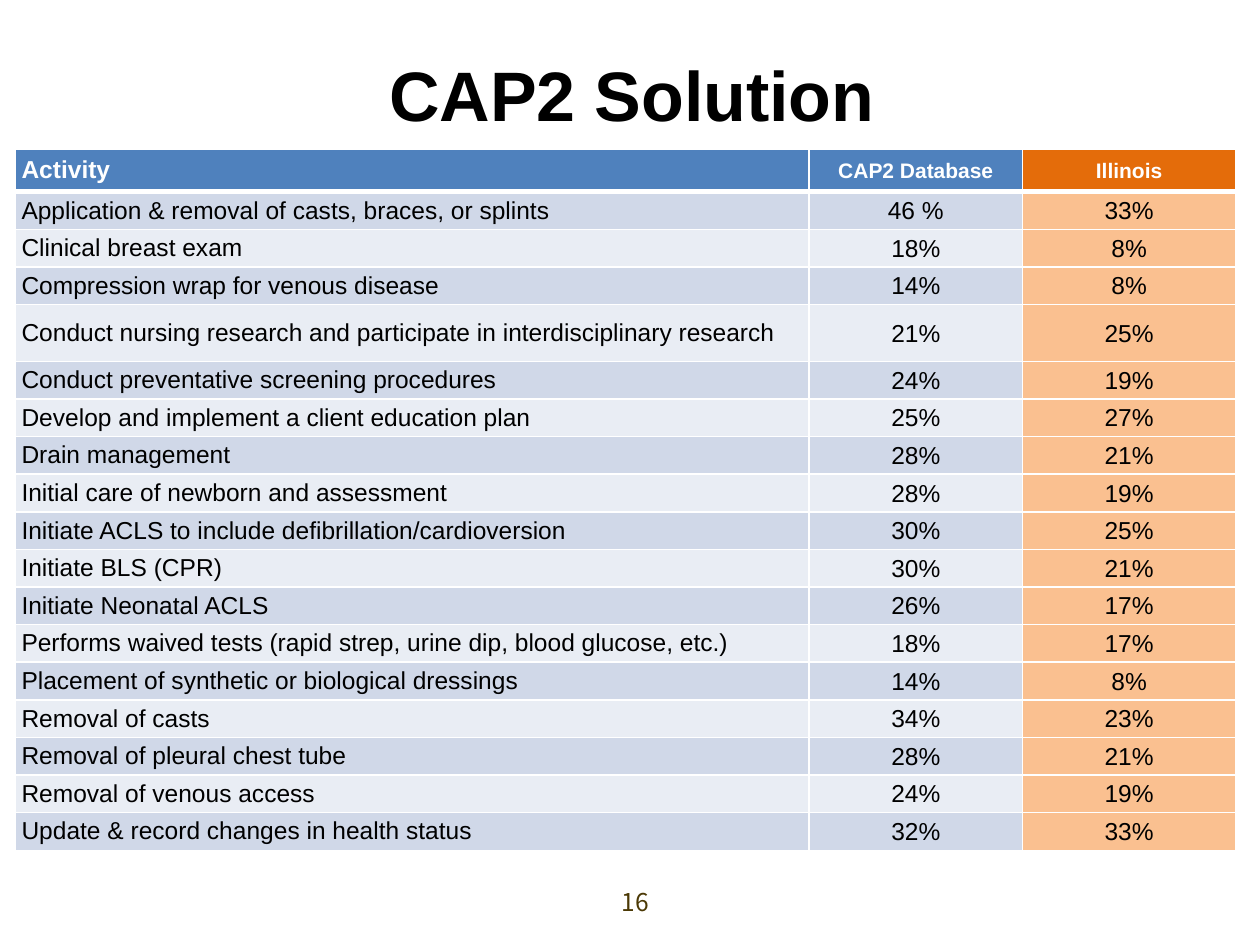
from lxml import etree
from pptx import Presentation
from pptx.dml.color import RGBColor
from pptx.enum.text import MSO_ANCHOR, PP_ALIGN
from pptx.oxml.ns import qn
from pptx.util import Pt

LEFT, CENTER = PP_ALIGN.LEFT, PP_ALIGN.CENTER
TOP, MIDDLE = MSO_ANCHOR.TOP, MSO_ANCHOR.MIDDLE

BLACK = RGBColor(0x00, 0x00, 0x00)
WHITE = RGBColor(0xFF, 0xFF, 0xFF)
BROWN = RGBColor(0x4B, 0x39, 0x05)
BLUE = RGBColor(0x4F, 0x81, 0xBD)
ORANGE = RGBColor(0xE4, 0x6C, 0x0A)
BAND_DARK = RGBColor(0xD0, 0xD8, 0xE8)
BAND_LIGHT = RGBColor(0xE9, 0xED, 0xF4)
PEACH = RGBColor(0xFA, 0xC0, 0x90)

HEADER = ("Activity", "CAP2 Database", "Illinois")
ACTIVITIES = [
    ("Application & removal of casts, braces, or splints", "46 %", "33%"),
    ("Clinical breast exam", "18%", "8%"),
    ("Compression wrap for venous disease", "14%", "8%"),
    ("Conduct nursing research and participate in interdisciplinary research", "21%", "25%"),
    ("Conduct preventative screening procedures", "24%", "19%"),
    ("Develop and implement a client education plan", "25%", "27%"),
    ("Drain management", "28%", "21%"),
    ("Initial care of newborn and assessment", "28%", "19%"),
    ("Initiate ACLS to include defibrillation/cardioversion", "30%", "25%"),
    ("Initiate BLS (CPR)", "30%", "21%"),
    ("Initiate Neonatal ACLS", "26%", "17%"),
    ("Performs waived tests (rapid strep, urine dip, blood glucose, etc.)", "18%", "17%"),
    ("Placement of synthetic or biological dressings", "14%", "8%"),
    ("Removal of casts", "34%", "23%"),
    ("Removal of pleural chest tube", "28%", "21%"),
    ("Removal of venous access", "24%", "19%"),
    ("Update & record changes in health status", "32%", "33%"),
]
COLUMN_WIDTHS = (453.6, 122.1, 121.7)
HEADER_HEIGHT, ROW_HEIGHT, TALL_ROW_HEIGHT = 24.6, 21.5, 32.5
TALL_ROW = 4


class SlideBuilder:
    font = "Arial"

    def __init__(self, slide):
        self.slide = slide

    def set_text(self, frame, text, size, color, bold=False, align=CENTER, font=None):
        frame.text = text
        paragraph = frame.paragraphs[0]
        paragraph.alignment = align
        paragraph.font.name = font or self.font
        paragraph.font.size = Pt(size)
        paragraph.font.bold = bold
        paragraph.font.color.rgb = color

    def title(self, text, left, top, width, height):
        heading = self.slide.shapes.title
        heading.left, heading.top = Pt(left), Pt(top)
        heading.width, heading.height = Pt(width), Pt(height)
        heading.text_frame.vertical_anchor = TOP
        heading.text_frame.margin_top = Pt(8)
        self.set_text(heading.text_frame, text, 40, BLACK, bold=True)

    def page_number(self, text, left, top, width, height):
        box = self.slide.shapes.add_textbox(Pt(left), Pt(top), Pt(width), Pt(height))
        box.text_frame.word_wrap = True
        self.set_text(box.text_frame, text, 14, BROWN, font="Noto Sans CJK JP")

    def borders(self, cell, widths):
        properties = cell._tc.get_or_add_tcPr()
        for side, width in widths.items():
            line = etree.SubElement(properties, qn(f"a:ln{side}"), w=str(Pt(width)))
            fill = etree.SubElement(line, qn("a:solidFill"))
            etree.SubElement(fill, qn("a:srgbClr"), val=str(WHITE))

    def cell(self, cell, row, column, text):
        is_header, is_activity = row == 0, column == 0
        self.borders(cell, {"L": 1, "R": 1, "T": 3 if row == 1 else 1, "B": 3 if is_header else 1})
        if column == 2:
            fill = ORANGE if is_header else PEACH
        elif is_header:
            fill = BLUE
        else:
            fill = BAND_DARK if row % 2 else BAND_LIGHT
        cell.fill.solid()
        cell.fill.fore_color.rgb = fill
        cell.vertical_anchor = MIDDLE
        cell.margin_left = Pt(3.6 if is_activity else 0.7)
        cell.margin_right = cell.margin_top = Pt(0 if is_activity else 0.7)
        cell.margin_bottom = 0
        self.set_text(cell.text_frame, text,
                      size=12 if is_header and not is_activity else 14,
                      color=WHITE if is_header else BLACK,
                      bold=is_header,
                      align=LEFT if is_activity else CENTER)

    def table(self, rows, left, top, widths, heights):
        table = self.slide.shapes.add_table(
            len(rows), len(widths), Pt(left), Pt(top), Pt(sum(widths)), Pt(sum(heights))).table
        table.horz_banding = False
        for column, width in zip(table.columns, widths):
            column.width = Pt(width)
        for row, (height, texts) in enumerate(zip(heights, rows)):
            table.rows[row].height = Pt(height)
            for column, text in enumerate(texts):
                self.cell(table.cell(row, column), row, column, text)


def main():
    presentation = Presentation()
    presentation.slide_width, presentation.slide_height = Pt(720), Pt(540)
    builder = SlideBuilder(presentation.slides.add_slide(presentation.slide_layouts[5]))
    builder.page_number("16", 288, 503.3, 150, 36)
    builder.title("CAP2 Solution", 9.4, 21.6, 703.4, 90)
    heights = [HEADER_HEIGHT] + [ROW_HEIGHT] * len(ACTIVITIES)
    heights[TALL_ROW] = TALL_ROW_HEIGHT
    builder.table([HEADER] + ACTIVITIES, 8.7, 85, COLUMN_WIDTHS, heights)
    presentation.save("out.pptx")


if __name__ == "__main__":
    main()
